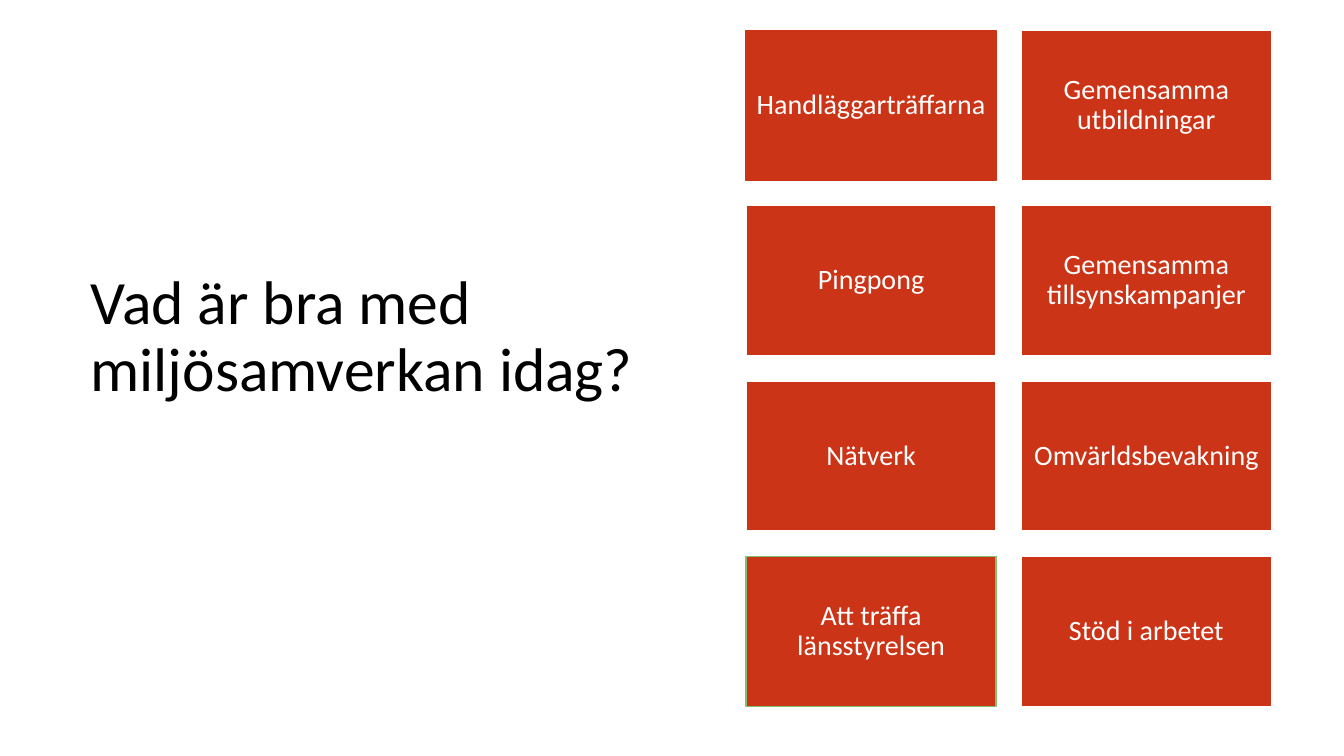
import pptx
import pptx.util
import pptx.dml.color
import pptx.enum.shapes
import pptx.enum.text

Inches = pptx.util.Inches
Pt = pptx.util.Pt
Align = pptx.enum.text.PP_ALIGN

COLORS = {"red": "CC3417", "green": "83C06F", "white": "FFFFFF", "black": "000000"}

BENEFITS = [
    ("Handläggarträffarna", "Gemensamma utbildningar"),
    ("Pingpong", "Gemensamma tillsynskampanjer"),
    ("Nätverk", "Omvärldsbevakning"),
    ("Att träffa länsstyrelsen", "Stöd i arbetet"),
]
OUTLINES = {"Handläggarträffarna": "red", "Att träffa länsstyrelsen": "green"}

GRID_LEFT, GRID_TOP = 7.4, 0.3
COLUMN_STEP, ROW_STEP = 2.73, 1.74
TILE_WIDTH, TILE_HEIGHT = 2.48, 1.49


class SlideBuilder:
    font = "Calibri"
    line_spacing = 0.9

    def __init__(self, slide):
        self.slide = slide

    def color(self, name):
        return pptx.dml.color.RGBColor.from_string(COLORS[name])

    def set_wording(self, shape, wording, size, color, align, inset):
        frame = shape.text_frame
        frame.word_wrap = True
        frame.vertical_anchor = pptx.enum.text.MSO_ANCHOR.MIDDLE
        frame.margin_left = frame.margin_right = Inches(inset)
        frame.margin_top = frame.margin_bottom = Inches(min(inset, 0.08))
        frame.text = wording
        paragraph = frame.paragraphs[0]
        paragraph.alignment = align
        paragraph.line_spacing = self.line_spacing
        font = paragraph.runs[0].font
        font.name = self.font
        font.size = Pt(size)
        font.color.rgb = self.color(color)

    def title(self, wording, left, top, width, height):
        heading = self.slide.shapes.add_textbox(
            Inches(left), Inches(top), Inches(width), Inches(height))
        self.set_wording(heading, wording, 44, "black", Align.LEFT, 0.1)

    def tile(self, wording, left, top, outline):
        tile = self.slide.shapes.add_shape(
            pptx.enum.shapes.MSO_SHAPE.RECTANGLE,
            Inches(left), Inches(top), Inches(TILE_WIDTH), Inches(TILE_HEIGHT))
        tile.shadow.inherit = False
        tile.fill.solid()
        tile.fill.fore_color.rgb = self.color("red")
        tile.line.color.rgb = self.color(outline)
        tile.line.width = Pt(1)
        self.set_wording(tile, wording, 20, "white", Align.CENTER, 0.08)


def main():
    presentation = pptx.Presentation()
    presentation.slide_width = Inches(13.33)
    presentation.slide_height = Inches(7.5)
    builder = SlideBuilder(presentation.slides.add_slide(presentation.slide_layouts[6]))

    for row, benefits in enumerate(BENEFITS):
        for column, benefit in enumerate(benefits):
            builder.tile(
                benefit,
                GRID_LEFT + column * COLUMN_STEP,
                GRID_TOP + row * ROW_STEP,
                OUTLINES.get(benefit, "white"))
    builder.title("Vad är bra med miljösamverkan idag?", 0.8, 2.63, 5.94, 1.45)

    presentation.save("out.pptx")


if __name__ == "__main__":
    main()
